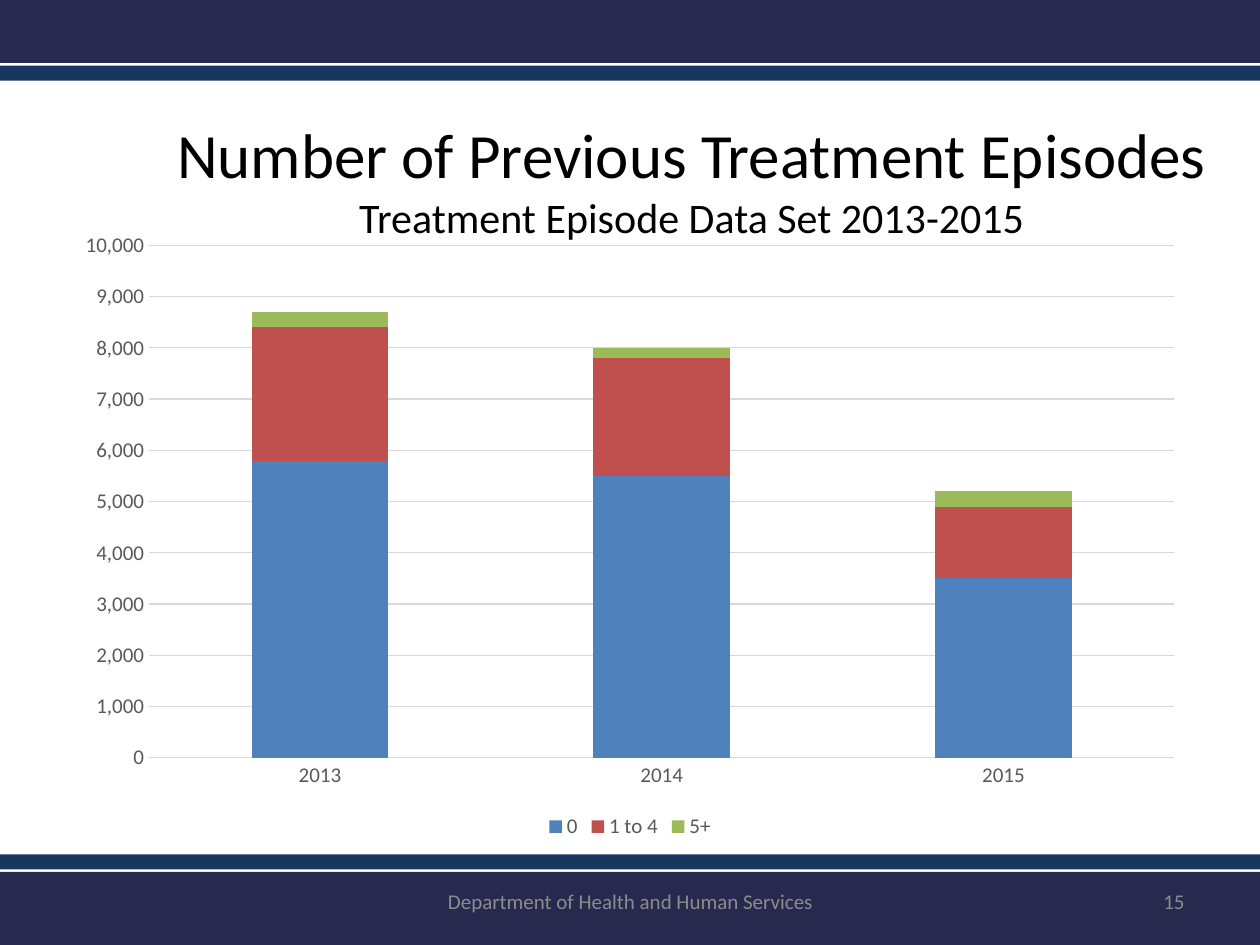
from pptx import Presentation
from pptx.chart.data import CategoryChartData
from pptx.dml.color import RGBColor
from pptx.enum.chart import XL_CHART_TYPE, XL_LEGEND_POSITION, XL_TICK_MARK
from pptx.enum.shapes import MSO_SHAPE
from pptx.enum.text import MSO_ANCHOR, PP_ALIGN
from pptx.util import Inches, Pt

RECT = MSO_SHAPE.RECTANGLE
STACKED = XL_CHART_TYPE.COLUMN_STACKED
BOTTOM = XL_LEGEND_POSITION.BOTTOM
NO_TICK = XL_TICK_MARK.NONE
MIDDLE = MSO_ANCHOR.MIDDLE
CENTER, RIGHT = PP_ALIGN.CENTER, PP_ALIGN.RIGHT

FONT = "Calibri"
COLORS = {
    "navy": "28294E", "blue": "17375E", "black": "000000",
    "foot": "8C8C8C", "label": "595959", "grid": "D9D9D9",
    "none": "4F81BD", "some": "C0504D", "many": "9BBB59",
}

# Content
TITLE = [("Number of Previous Treatment Episodes", 36),
         ("Treatment Episode Data Set 2013-2015", 24)]
YEARS = ["2013", "2014", "2015"]
SERIES = [
    ("0", [5800, 5500, 3500], "none"),
    ("1 to 4", [2600, 2300, 1400], "some"),
    ("5+", [300, 200, 300], "many"),
]
BANDS = [  # top, height, color
    (0, 0.5, "navy"), (0.52, 0.12, "blue"),
    (6.92, 0.58, "navy"), (6.78, 0.12, "blue"),
]
FOOTER = [  # text, left, width, alignment
    ("Department of Health and Human Services", 3.42, 3.17, CENTER),
    ("15", 7.17, 2.33, RIGHT),
]


def color(name):
    return RGBColor.from_string(COLORS[name])


def style(font, size, name):
    font.name = FONT
    font.size = Pt(size)
    font.color.rgb = color(name)


def place(shape, left, top, width, height):
    shape.left, shape.top = Inches(left), Inches(top)
    shape.width, shape.height = Inches(width), Inches(height)


def add_run(para, text, size, name):
    run = para.add_run()
    run.text = text
    style(run.font, size, name)


deck = Presentation()
deck.slide_width, deck.slide_height = Inches(10), Inches(7.5)
slide = deck.slides.add_slide(deck.slide_layouts[5])
shapes = slide.shapes

# Header and footer bands
for top, height, name in BANDS:
    band = shapes.add_shape(RECT, 0, Inches(top), Inches(10), Inches(height))
    band.shadow.inherit = False
    band.fill.solid()
    band.fill.fore_color.rgb = color(name)
    band.line.fill.background()

# Title with a smaller second line
title = shapes.title
place(title, 0.99, 0.67, 9, 1.5)
title.text_frame.vertical_anchor = MIDDLE
para = title.text_frame.paragraphs[0]
para.alignment = CENTER
for i, (text, size) in enumerate(TITLE):
    if i:
        para.add_line_break()
    add_run(para, text, size, "black")

# Footer text and slide number
for text, left, width, align in FOOTER:
    box = shapes.add_textbox(Inches(left), Inches(6.95), Inches(width), Inches(0.4))
    frame = box.text_frame
    frame.word_wrap = True
    frame.vertical_anchor = MIDDLE
    para = frame.paragraphs[0]
    para.alignment = align
    add_run(para, text, 12, "foot")

# Stacked column chart
data = CategoryChartData(number_format="#,##0")
data.categories = YEARS
for label, vals, _ in SERIES:
    data.add_series(label, vals)
chart = shapes.add_chart(STACKED, Inches(0.5), Inches(1.75),
                         Inches(9), Inches(4.95), data).chart
style(chart.font, 10, "black")
chart.has_title = False
chart.has_legend = True
chart.legend.position = BOTTOM
chart.legend.include_in_layout = False
style(chart.legend.font, 12, "label")

plot = chart.plots[0]
plot.gap_width, plot.overlap = 150, 100
plot.vary_by_categories = False
for series, (_, _, name) in zip(plot.series, SERIES):
    series.format.fill.solid()
    series.format.fill.fore_color.rgb = color(name)

# Axes and gridlines
years, counts = chart.category_axis, chart.value_axis
for axis in (years, counts):
    axis.major_tick_mark = axis.minor_tick_mark = NO_TICK
    style(axis.tick_labels.font, 12, "label")
counts.minimum_scale, counts.maximum_scale = 0, 10000
counts.major_unit = 1000
counts.tick_labels.number_format = "#,##0"
counts.tick_labels.number_format_is_linked = False
counts.format.line.fill.background()
counts.has_major_gridlines = True
for line in (years.format.line, counts.major_gridlines.format.line):
    line.color.rgb = color("grid")
    line.width = Pt(0.75)

deck.save("out.pptx")
